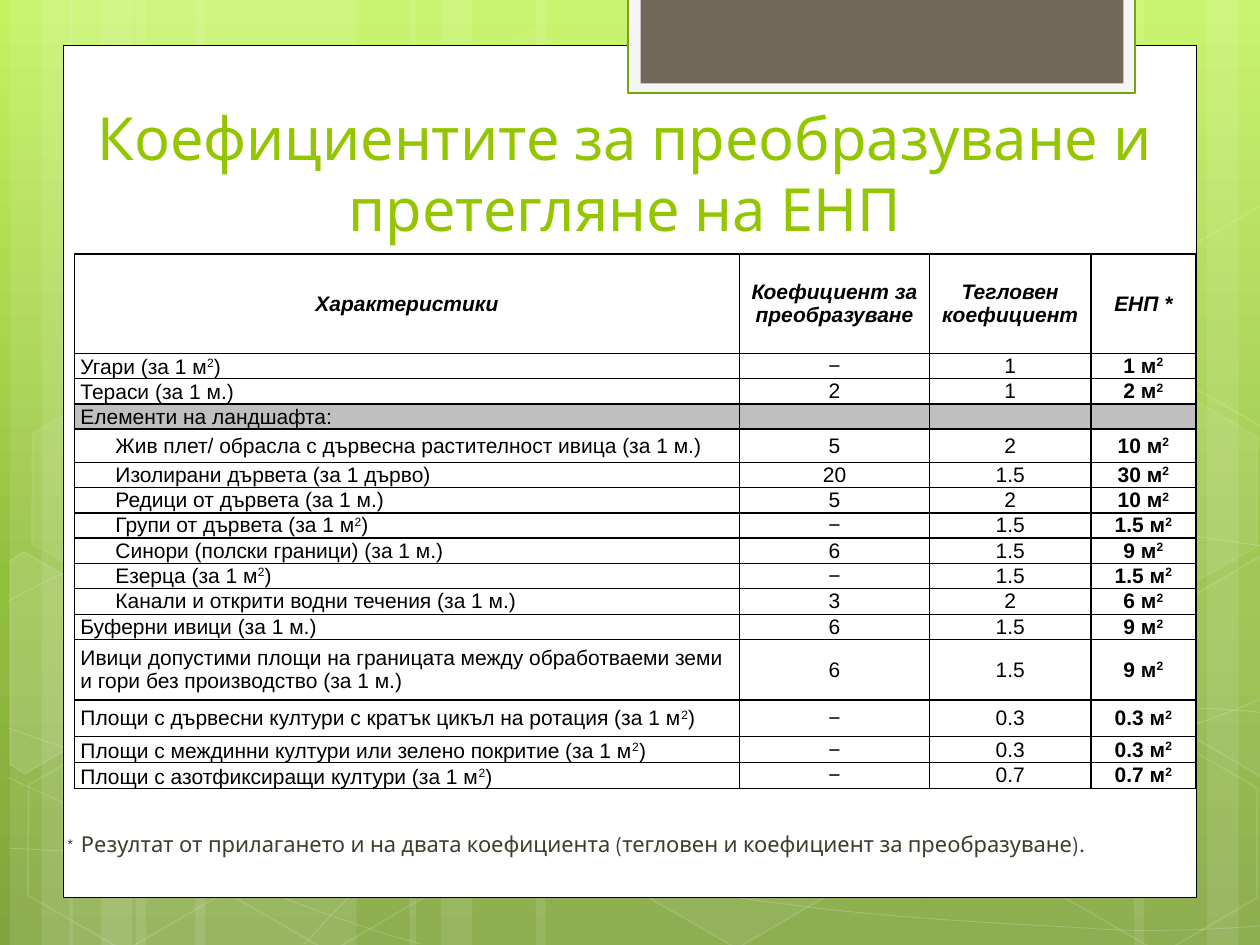
"""Build the slide on conversion and weighting coefficients of ecological focus areas."""
from copy import deepcopy
from lxml import etree
from pptx import Presentation
from pptx.dml.color import RGBColor
from pptx.enum import shapes, text
from pptx.oxml import ns
from pptx.util import Pt

WHITE = RGBColor(0xFF, 0xFF, 0xFF)
BLACK = RGBColor(0, 0, 0)
GREY = RGBColor(0xBF, 0xBF, 0xBF)
LIME = RGBColor(0x94, 0xC6, 0x00)
GREEN = RGBColor(0x74, 0xA5, 0x10)
OLIVE = RGBColor(0x3E, 0x3D, 0x2D)
BROWN = RGBColor(0x71, 0x68, 0x5A)
PALE = RGBColor(0xF5, 0xF5, 0xF5)
GRADIENT = [(0, RGBColor(0xC3, 0xF3, 0x5F)), (0.62, RGBColor(0x93, 0xBF, 0x3F)),
            (1, RGBColor(0x81, 0xA5, 0x3E))]
HEAD_FONT, BODY_FONT = "League Spartan", "Arial"
LEFT, CENTER = text.PP_ALIGN.LEFT, text.PP_ALIGN.CENTER
TOP, MIDDLE, BOTTOM = text.MSO_ANCHOR.TOP, text.MSO_ANCHOR.MIDDLE, text.MSO_ANCHOR.BOTTOM

TITLE = "Коефициентите за преобразуване и претегляне на ЕНП"
NOTE = "Резултат от прилагането и на двата коефициента (тегловен и коефициент за преобразуване)."
HEADERS = ["Характеристики", "Коефициент за преобразуване", "Тегловен коефициент", "ЕНП *"]
# level, feature, conversion, weight, area, row height
ROWS = [
    (0, "Угари (за 1 м²)", "−", "1", "1 м²", 14),
    (0, "Тераси (за 1 м.)", "2", "1", "2 м²", 14),
    (0, "Елементи на ландшафта:", "", "", "", 14),
    (1, "Жив плет/ обрасла с дървесна растителност ивица (за 1 м.)", "5", "2", "10 м²", 19),
    (1, "Изолирани дървета (за 1 дърво)", "20", "1.5", "30 м²", 14),
    (1, "Редици от дървета (за 1 м.)", "5", "2", "10 м²", 14),
    (1, "Групи от дървета (за 1 м²)", "−", "1.5", "1.5 м²", 14),
    (1, "Синори (полски граници) (за 1 м.)", "6", "1.5", "9 м²", 14),
    (1, "Езерца (за 1 м²)", "−", "1.5", "1.5 м²", 14),
    (1, "Канали и открити водни течения (за 1 м.)", "3", "2", "6 м²", 14.8),
    (0, "Буферни ивици (за 1 м.)", "6", "1.5", "9 м²", 14.4),
    (0, "Ивици допустими площи на границата между обработваеми земи и гори без производство "
        "(за 1 м.)", "6", "1.5", "9 м²", 34.5),
    (0, "Площи с дървесни култури с кратък цикъл на ротация (за 1 м²)", "−", "0.3", "0.3 м²", 21),
    (0, "Площи с междинни култури или зелено покритие (за 1 м²)", "−", "0.3", "0.3 м²", 14.8),
    (0, "Площи с азотфиксиращи култури (за 1 м²)", "−", "0.7", "0.7 м²", 14.8),
]
COLUMNS, HEADER_HEIGHT = [380, 108.6, 92.2, 60], 56.7
BOTTOM_ROWS = {1, 2, 3, 14, 15}

STRIPES = [(77.8, 126), (5.8, 36), (23.8, 59.8), (111.6, 126), (39.6, 36), (57.6, 59.8),
           (527.8, 126), (689.8, 36), (648, 59.8), (306, 221.8), (234, 36), (252, 59.8)]
CURVES = [
    [(5, 484.6), (43.9, 486.7), (82.8, 488.9), (136.8, 488.2), (190.8, 487.4), (257.8, 486),
     (329.8, 478.8), (401.8, 471.6), (504, 457.9), (570.2, 444.2), (635.8, 430.6),
     (703.4, 409), (725, 396.7)],
    [(5, 343.4), (25.9, 331.9), (46.8, 321.1), (87.1, 310.3), (128.2, 299.5), (186.5, 283.7),
     (249.8, 278.6), (313.9, 273.6), (391.7, 272.9), (470.9, 278.6), (550.1, 284.4),
     (681.8, 306.7), (725, 312.5)],
    [(4.3, 444.2), (91.4, 483.8), (177.8, 523.4), (240.5, 539.3)],
    [(5, 416.2), (27.4, 424.1), (50.4, 432), (92.2, 443.5), (133.9, 454.3), (196.6, 472.3),
     (257, 484.6), (316.8, 496.8), (392.4, 509.8), (452.2, 517), (511.9, 524.9), (576, 527.8),
     (614.2, 529.9), (651.6, 532.8), (661.7, 531.4), (680.4, 531.4), (699.1, 530.6),
     (711.4, 529.9), (725, 528.5)],
    [(174.2, 539.3), (187.2, 524.9), (200.2, 510.5), (217.4, 497.5), (234.7, 484.6),
     (259.2, 470.2), (279.4, 460.1), (293.8, 450.7), (311.8, 445.7), (338.4, 438.5),
     (364.3, 431.3), (412.6, 421.2), (437.8, 416.2), (463.7, 411.1), (467.3, 411.1),
     (489.6, 409.7), (511.9, 407.5), (547.2, 405.4), (571.7, 404.6), (596.9, 403.9),
     (637.9, 404.6), (637.9, 404.6), (654, 404.6), (670, 404.6), (686.2, 404.6),
     (699.1, 405.4), (711.4, 406.1), (717.8, 406.8), (724.3, 407.5), (722.2, 406.8),
     (724.3, 407.5)],
]
# left, top, fill opacity, line opacity
HEXAGONS = [(240.5, 25.9, 4, 8), (357.8, 424.1, 6, 12), (7.9, 425.5, 0, 12), (10.1, 224.6, 7, 8),
            (125.3, 426.2, 0, 12), (542.2, 326.2, 10, 12), (600.5, 427, 0, 12),
            (600.5, 226.1, 7, 8)]
CUT_HEXAGONS = [
    (10, [(5.8, 320.4), (13.7, 315.4), (69.1, 347), (68.4, 410.4), (14.4, 442.1), (5.8, 437)]),
    (4, [(666.7, 349.2), (720.7, 317.5), (726.5, 321.1), (726.5, 441.4), (721.4, 444.2),
         (666.7, 412.6)]),
    (0, [(666.7, 149), (720.7, 117.4), (727.2, 121), (726.5, 241.2), (721.4, 244.1),
         (666.7, 212.4)]),
]
PANELS = [(36, 25.9, 648, 487, WHITE, BLACK, 0.5), (359, -1.4, 289.6, 54.7, PALE, GREEN, 1.25),
          (366, -1.4, 276, 49, BROWN, None, 0)]


def set_opacity(fill, color, percent):
    fill.solid()
    fill.fore_color.rgb = color
    if percent < 100:
        clr = fill._xPr.find(".//" + ns.qn("a:srgbClr"))
        etree.SubElement(clr, ns.qn("a:alpha")).set("val", str(percent * 1000))


def paint(sp, fill=None, opacity=100, line=None, width=1, line_opacity=100):
    sp.shadow.inherit = False
    if fill is None or opacity == 0:
        sp.fill.background()
    else:
        set_opacity(sp.fill, fill, opacity)
    if line is None:
        sp.line.fill.background()
    else:
        sp.line.width = Pt(width)
        set_opacity(sp.line.fill, line, line_opacity)


def add_shape(s, kind, x, y, w, h, **look):
    sp = s.shapes.add_shape(kind, Pt(x), Pt(y), Pt(w), Pt(h))
    paint(sp, **look)
    return sp


def add_outline(s, points, close, **look):
    pts = [(Pt(x), Pt(y)) for x, y in points]
    fb = s.shapes.build_freeform(*pts[0])
    fb.add_line_segments(pts[1:], close=close)
    sp = fb.convert_to_shape()
    paint(sp, **look)
    return sp


def bend(sp):
    lines = list(sp._element.iter(ns.qn("a:lnTo")))
    for i in range(0, len(lines), 3):
        curve = etree.Element(ns.qn("a:cubicBezTo"))
        lines[i].addprevious(curve)
        for line in lines[i:i + 3]:
            curve.append(line[0])
            line.getparent().remove(line)


def write(p, content, size=12, font=BODY_FONT, color=BLACK, bold=False, italic=False, align=LEFT):
    p.alignment = align
    for i, part in enumerate(content.replace("²", "|2|").split("|")):
        if part:
            r = p.add_run()
            r.text = part
            f = r.font
            f.size, f.name, f.bold, f.italic = Pt(size), font, bold, italic
            f.color.rgb = color
            if i % 2:
                r._r.get_or_add_rPr().set("baseline", "30000")


def add_text(s, x, y, w, h, anchor):
    tf = s.shapes.add_textbox(Pt(x), Pt(y), Pt(w), Pt(h)).text_frame
    tf.word_wrap, tf.vertical_anchor = True, anchor
    return tf.paragraphs[0]


def set_borders(cell):
    tc_pr = cell._tc.get_or_add_tcPr()
    for i, side in enumerate(("lnL", "lnR", "lnT", "lnB")):
        ln = etree.Element(ns.qn("a:" + side), w=str(Pt(1)))
        fill = etree.SubElement(ln, ns.qn("a:solidFill"))
        etree.SubElement(fill, ns.qn("a:srgbClr"), val=str(BLACK))
        tc_pr.insert(i, ln)


def add_coefficients(s):
    heights = [HEADER_HEIGHT] + [row[-1] for row in ROWS]
    table = s.shapes.add_table(len(heights), len(COLUMNS), Pt(42.6), Pt(145.2),
                               Pt(sum(COLUMNS)), Pt(sum(heights))).table
    for col, w in zip(table.columns, COLUMNS):
        col.width = Pt(w)
    for i, (level, *values) in enumerate([(0, *HEADERS, HEADER_HEIGHT)] + ROWS):
        table.rows[i].height = Pt(values.pop())
        for j, value in enumerate(values):
            cell, header = table.cell(i, j), i == 0
            cell.margin_left = Pt(3.4 + (20 if level and j == 0 else 0))
            cell.margin_right, cell.margin_top, cell.margin_bottom = Pt(3.4), 0, 0
            cell.vertical_anchor = BOTTOM if j == 0 and i in BOTTOM_ROWS else MIDDLE
            if values[1]:
                cell.fill.background()
            else:
                cell.fill.solid()
                cell.fill.fore_color.rgb = GREY
            set_borders(cell)
            p = cell.text_frame.paragraphs[0]
            write(p, value, bold=header or j == 3, italic=header,
                  align=CENTER if header or j else LEFT)
            if header:
                p.space_after = Pt(6)
            if not value:
                etree.SubElement(p._p, ns.qn("a:endParaRPr"), sz="1200")


def main():
    prs = Presentation()
    prs.slide_width, prs.slide_height = Pt(720), Pt(540)
    s = prs.slides.add_slide(prs.slide_layouts[6])
    bg = s.background.fill
    bg.gradient()
    bg.gradient_angle = 270
    stops = bg._fill._gradFill.gsLst
    stops.append(deepcopy(stops[-1]))
    for stop, (position, color) in zip(bg.gradient_stops, GRADIENT):
        stop.position, stop.color.rgb = position, color

    rect, hexagon = shapes.MSO_SHAPE.RECTANGLE, shapes.MSO_SHAPE.HEXAGON
    for x, w in STRIPES:
        add_shape(s, rect, x, 0, w, 540, fill=WHITE, opacity=10)
    for pts in CURVES:
        bend(add_outline(s, pts, False, line=WHITE, width=0.5, line_opacity=20))
    for x, y, opacity, line_opacity in HEXAGONS:
        sp = add_shape(s, hexagon, x, y, 126, 109.4, fill=WHITE, opacity=opacity,
                       line=WHITE, line_opacity=line_opacity)
        sp.adjustments[0], sp.rotation = 0.285, 30
    for opacity, pts in CUT_HEXAGONS:
        add_outline(s, pts, True, fill=WHITE, opacity=opacity, line=WHITE, line_opacity=12)
    for x, y, w, h, fill, line, width in PANELS:
        add_shape(s, rect, x, y, w, h, fill=fill, line=line, width=width)

    p = add_text(s, 36.7, 49, 640.8, 93.6, BOTTOM)
    write(p, TITLE, size=34, font=HEAD_FONT, color=LIME, align=CENTER)
    p = add_text(s, 31, 468.7, 658, 24.5, TOP)
    for part, size in (("*", 10.6), (" ", 15), (NOTE, 12.5)):
        write(p, part, size=size, font=HEAD_FONT, color=OLIVE)
    add_coefficients(s)
    prs.save("out.pptx")


if __name__ == "__main__":
    main()
